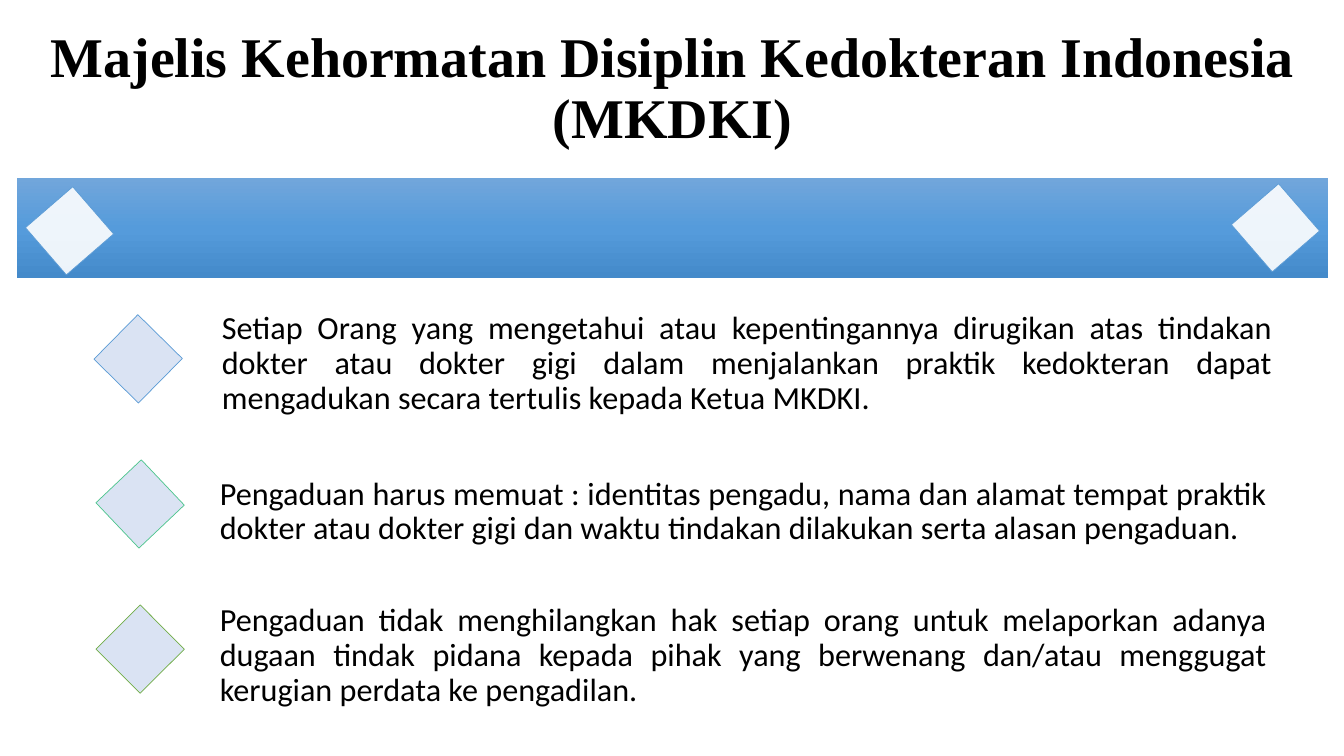
from copy import deepcopy

from lxml import etree
from pptx import Presentation
from pptx import util as u
from pptx.dml.color import RGBColor
from pptx.enum import shapes, text
from pptx.oxml.ns import qn

THEME = {
    "text": RGBColor.from_string("000000"),
    "white": RGBColor.from_string("FFFFFF"),
    "pale": RGBColor.from_string("DAE3F3"),
    "blue": RGBColor.from_string("5B9BD5"),
    "teal": RGBColor.from_string("4DC58D"),
    "green": RGBColor.from_string("70AD47"),
    "bar": [(0, "71A6DB"), (0.5, "559BDB"), (1, "448ACA")],
    "title": {"name": "Times New Roman", "size": u.Pt(40), "bold": True},
    "body": {"name": "Calibri", "size": u.Pt(23), "bold": False},
}


def add_diamond(left, top, turn, fill, line):
    diamond = slide.shapes.add_shape(
        shapes.MSO_SHAPE.RECTANGLE,
        u.Inches(left), u.Inches(top), u.Inches(0.62), u.Inches(0.62))
    diamond.rotation = turn
    diamond.shadow.inherit = False
    diamond.fill.solid()
    diamond.fill.fore_color.rgb = THEME[fill]
    diamond.line.color.rgb = THEME[line]
    diamond.line.width = u.Pt(0.5)
    return diamond


def write_text(box, wording, style, align, insets):
    frame = box.text_frame
    settings = {
        "word_wrap": True,
        "auto_size": text.MSO_AUTO_SIZE.NONE,
        "vertical_anchor": text.MSO_ANCHOR.MIDDLE,
        "margin_left": u.Inches(insets[0]),
        "margin_right": u.Inches(insets[0]),
        "margin_top": u.Inches(insets[1]),
        "margin_bottom": u.Inches(insets[1]),
    }
    for name, value in settings.items():
        setattr(frame, name, value)
    para = frame.paragraphs[0]
    para.alignment = align
    para.line_spacing = 0.9
    span = para.add_run()
    span.text = wording
    for name, value in THEME[style].items():
        setattr(span.font, name, value)
    span.font.color.rgb = THEME["text"]


deck = Presentation()
deck.slide_width = u.Inches(13.33)
deck.slide_height = u.Inches(7.5)
slide = deck.slides.add_slide(deck.slide_layouts[5])

title = slide.shapes.title
title.left, title.top = u.Inches(0.22), u.Inches(0)
title.width, title.height = u.Inches(12.9), u.Inches(1.78)
write_text(title, "Majelis Kehormatan Disiplin Kedokteran Indonesia (MKDKI)",
           "title", text.PP_ALIGN.CENTER, (0.08, 0.06))

bar = slide.shapes.add_shape(
    shapes.MSO_SHAPE.RECTANGLE,
    u.Inches(0.17), u.Inches(1.77), u.Inches(13), u.Inches(0.99))
bar.shadow.inherit = False
bar.line.fill.background()
bar.fill.gradient()
bar.fill.gradient_angle = 270
stop_list = bar.element.spPr.find(".//" + qn("a:gsLst"))
stop_list.append(deepcopy(stop_list[0]))
for stop, (position, colour) in zip(bar.fill.gradient_stops, THEME["bar"]):
    stop.position = position
    stop.color.rgb = RGBColor.from_string(colour)

for left, top in [(0.38, 1.98), (12.34, 1.95)]:
    diamond = add_diamond(left, top, 49.1, "white", "blue")
    colour = diamond.element.spPr.find(qn("a:solidFill"))[0]
    etree.SubElement(colour, qn("a:alpha"), val="90000")

points = [
    (1.06, 44.6, "blue", 2.02, 2.89, 10.79,
     "Setiap Orang yang mengetahui atau kepentingannya dirugikan atas tindakan "
     "dokter atau dokter gigi dalam menjalankan praktik kedokteran dapat "
     "mengadukan secara tertulis kepada Ketua MKDKI."),
    (1.08, 46.5, "teal", 2, 4.36, 10.76,
     "Pengaduan harus memuat : identitas pengadu, nama dan alamat tempat praktik "
     "dokter atau dokter gigi dan waktu tindakan dilakukan serta alasan pengaduan."),
    (1.08, 45.1, "green", 2, 5.79, 10.76,
     "Pengaduan tidak menghilangkan hak setiap orang untuk melaporkan adanya "
     "dugaan tindak pidana kepada pihak yang berwenang dan/atau menggugat "
     "kerugian perdata ke pengadilan."),
]
for row, (mark, turn, line, left, top, width, wording) in enumerate(points):
    add_diamond(mark, 3.25 + 1.44 * row, turn, "pale", line)
    box = slide.shapes.add_textbox(
        u.Inches(left), u.Inches(top), u.Inches(width), u.Inches(1.44))
    write_text(box, wording, "body", text.PP_ALIGN.JUSTIFY, (0.18, 0.18))

deck.save("out.pptx")
